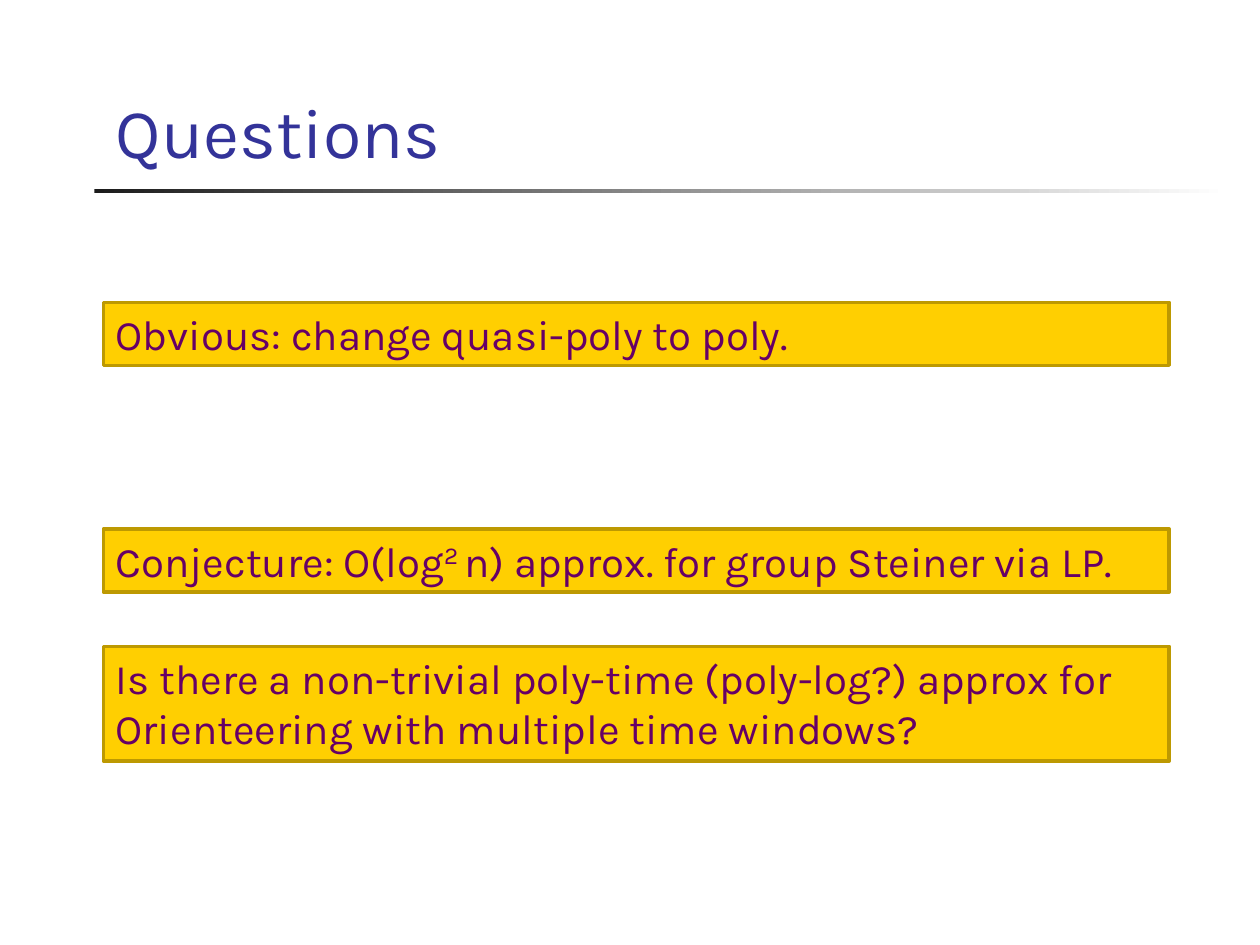
from dataclasses import dataclass

from pptx import Presentation
from pptx.dml.color import RGBColor
from pptx.enum.shapes import MSO_SHAPE
from pptx.enum.text import MSO_ANCHOR, MSO_AUTO_SIZE, PP_ALIGN
from pptx.util import Inches, Pt

RECTANGLE = MSO_SHAPE.RECTANGLE
TOP, BOTTOM = MSO_ANCHOR.TOP, MSO_ANCHOR.BOTTOM
LEFT = PP_ALIGN.LEFT
FIT_SHAPE = MSO_AUTO_SIZE.SHAPE_TO_FIT_TEXT


@dataclass(frozen=True)
class Theme:
    font: str = "Karla"
    title_size: int = 40
    body_size: int = 24
    title: str = "333399"
    body: str = "660066"
    box_fill: str = "FFCF01"
    box_line: str = "BD9901"
    rule_start: str = "1C1C1C"
    rule_end: str = "FFFFFF"


THEME = Theme()


def rgb(value):
    return RGBColor.from_string(value)


def write_text(shape, runs, *, size, color, anchor=TOP):
    """Write (text, baseline percent) runs as one left-aligned paragraph."""
    frame = shape.text_frame
    frame.word_wrap = True
    frame.vertical_anchor = anchor
    paragraph = frame.paragraphs[0]
    paragraph.alignment = LEFT
    for text, baseline in runs:
        run = paragraph.add_run()
        run.text = text
        run.font.name = THEME.font
        run.font.size = Pt(size)
        run.font.color.rgb = rgb(color)
        if baseline:
            run.font._element.set("baseline", str(baseline * 1000))


def add_heading(slide, left, top, width, height, text):
    heading = slide.shapes.add_textbox(left, top, width, height)
    write_text(heading, [(text, 0)], size=THEME.title_size,
               color=THEME.title, anchor=BOTTOM)


def add_fading_rule(slide, left, top, width, height):
    rule = slide.shapes.add_shape(RECTANGLE, left, top, width, height)
    rule.shadow.inherit = False
    rule.line.fill.background()
    rule.fill.gradient()
    rule.fill.gradient_angle = 0
    for stop, color, position in zip(rule.fill.gradient_stops,
                                     (THEME.rule_start, THEME.rule_end), (0, 1)):
        stop.color.rgb = rgb(color)
        stop.position = position


def add_question(slide, left, top, width, height, runs):
    question = slide.shapes.add_shape(RECTANGLE, left, top, width, height)
    question.shadow.inherit = False
    question.fill.solid()
    question.fill.fore_color.rgb = rgb(THEME.box_fill)
    question.line.color.rgb = rgb(THEME.box_line)
    question.line.width = Pt(2)
    write_text(question, runs, size=THEME.body_size, color=THEME.body)
    question.text_frame.auto_size = FIT_SHAPE


def main():
    prs = Presentation()
    prs.slide_width, prs.slide_height = Inches(10), Inches(7.5)
    slide = prs.slides.add_slide(prs.slide_layouts[6])
    margin = Inches(0.82)

    # Heading and its rule
    add_fading_rule(slide, Inches(0.75), Inches(1.5), Inches(9), Inches(0.03))
    add_heading(slide, margin, Inches(0.17), Inches(8.94), Inches(1.25), "Questions")

    # Open questions: top, height, runs
    questions = [
        (2.4, 0.5, [("Obvious: change quasi-poly to poly.", 0)]),
        (4.2, 0.5, [("Conjecture: O(log", 0), ("2 ", 30),
                    ("n) approx. for group Steiner via LP.", 0)]),
        (5.13, 0.91, [("Is there a non-trivial poly-time (poly-log?) approx for "
                       "Orienteering with multiple time windows?", 0)]),
    ]
    for top, height, runs in questions:
        add_question(slide, margin, Inches(top), Inches(8.46), Inches(height), runs)

    prs.save("out.pptx")


if __name__ == "__main__":
    main()
